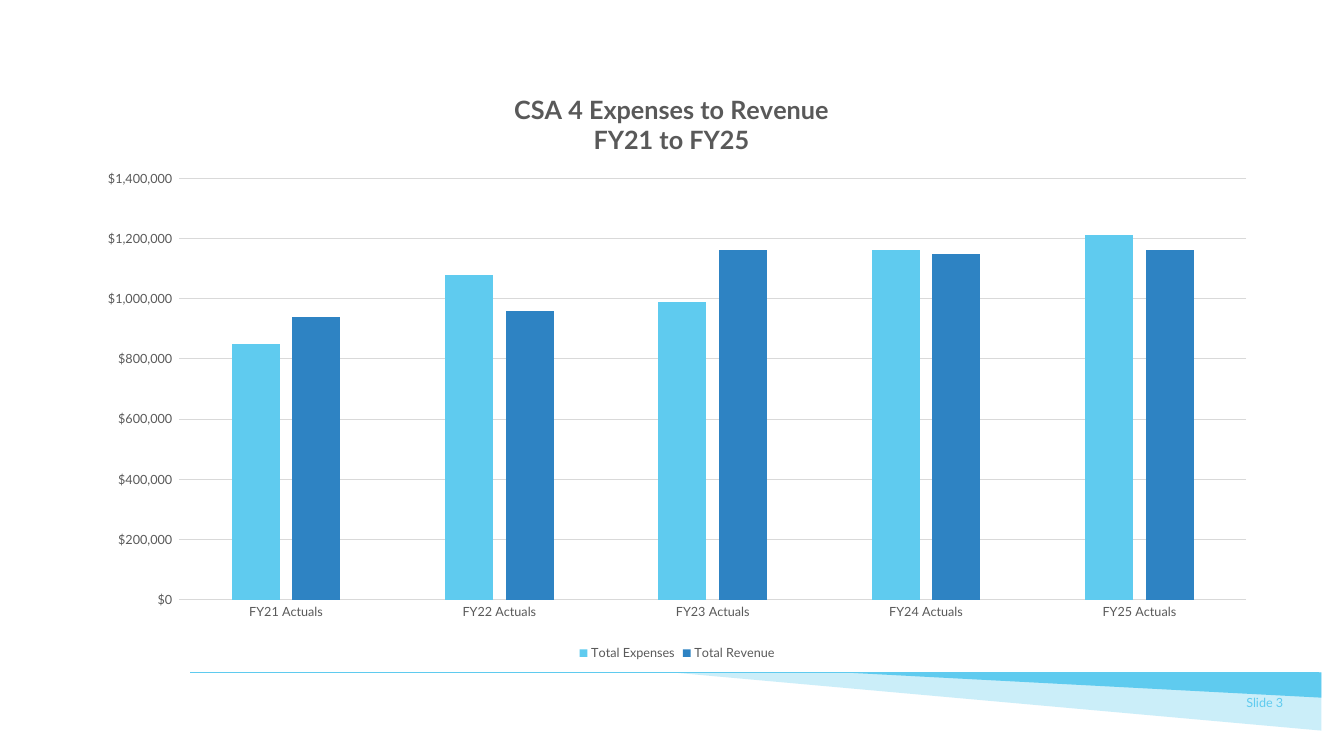
from dataclasses import dataclass

from lxml.etree import SubElement
from pptx import Presentation
from pptx.chart.data import CategoryChartData
from pptx.dml.color import RGBColor
from pptx.enum.chart import XL_CHART_TYPE, XL_LEGEND_POSITION, XL_TICK_MARK
from pptx.enum.shapes import MSO_CONNECTOR, MSO_SHAPE
from pptx.enum.text import MSO_ANCHOR, PP_ALIGN
from pptx.oxml import parse_xml
from pptx.oxml.ns import nsdecls, qn
from pptx.util import Cm, Pt

SKY = RGBColor(0x5F, 0xCB, 0xEF)
BLUE = RGBColor(0x2E, 0x83, 0xC3)
GRAY = RGBColor(0x59, 0x59, 0x59)
PALE = RGBColor(0xD9, 0xD9, 0xD9)
FACE = "Lato"
RIGHT = 33.3  # right edge of the footer band, in cm
TOP = 16.94  # top of the footer band, in cm


@dataclass
class Wedge:
    width: float
    height: float
    alpha: int = 100


@dataclass
class Bars:
    name: str
    color: RGBColor
    values: tuple[int, ...]


WEDGES = [Wedge(16.41, 1.47, 32), Wedge(12.14, 0.64)]
YEARS = [f"FY{year} Actuals" for year in range(21, 26)]
SERIES = [
    Bars("Total Expenses", SKY, (850000, 1080000, 990000, 1160000, 1210000)),
    Bars("Total Revenue", BLUE, (940000, 960000, 1160000, 1150000, 1160000)),
]


def style(font, size: float, color: RGBColor, bold: bool = False) -> None:
    font.name = FACE
    font.size = Pt(size)
    font.bold = bold
    font.color.rgb = color


def write(frame, text: str, *, size: float, color: RGBColor,
          bold: bool = False, align=PP_ALIGN.CENTER) -> None:
    frame.text = text
    for para in frame.paragraphs:
        para.alignment = align
        for run in para.runs:
            style(run.font, size, color, bold)


def draw_wedge(slide, wedge: Wedge) -> None:
    shape = slide.shapes.add_shape(
        MSO_SHAPE.RIGHT_TRIANGLE, Cm(RIGHT - wedge.width), Cm(TOP),
        Cm(wedge.width), Cm(wedge.height))
    shape.rotation = 180
    shape.shadow.inherit = False
    shape.line.fill.background()
    shape.fill.solid()
    shape.fill.fore_color.rgb = SKY
    if wedge.alpha < 100:
        tint = shape.fill._xPr.find(".//" + qn("a:srgbClr"))
        SubElement(tint, qn("a:alpha"), val=str(wedge.alpha * 1000))


def draw_band(slide) -> None:
    rule = slide.shapes.add_connector(
        MSO_CONNECTOR.STRAIGHT, Cm(4.8), Cm(TOP), Cm(33.25), Cm(TOP))
    rule.line.color.rgb = SKY
    rule.line.width = Pt(1)
    SubElement(rule._element.spPr, qn("a:effectLst"))
    for wedge in WEDGES:
        draw_wedge(slide, wedge)
    box = slide.shapes.add_textbox(Cm(29.92), Cm(17.2), Cm(2.67), Cm(1.02))
    box.text_frame.word_wrap = True
    box.text_frame.vertical_anchor = MSO_ANCHOR.MIDDLE
    write(box.text_frame, "Slide 3", size=9, color=SKY, align=PP_ALIGN.RIGHT)


def place(owner, before: str, **spots: float) -> None:
    """Fix a chart part at fractions of the chart, ahead of a given child."""
    for old in owner.findall(qn("c:layout")):
        owner.remove(old)
    inner = '<c:layoutTarget val="inner"/>' if "w" in spots else ""
    modes = "".join(f'<c:{key}Mode val="edge"/>' for key in ("x", "y"))
    sizes = "".join(f'<c:{key} val="{val}"/>' for key, val in spots.items())
    owner.find(qn(before)).addprevious(parse_xml(
        f'<c:layout {nsdecls("c")}><c:manualLayout>{inner}{modes}{sizes}'
        "</c:manualLayout></c:layout>"))


def style_axes(chart) -> None:
    for axis in (chart.category_axis, chart.value_axis):
        axis.major_tick_mark = axis.minor_tick_mark = XL_TICK_MARK.NONE
        style(axis.tick_labels.font, 9, GRAY)
    base = chart.category_axis.format.line
    grid = chart.value_axis.major_gridlines.format.line
    for line in (base, grid):
        line.color.rgb = PALE
        line.width = Pt(0.75)
    money = chart.value_axis
    money.format.line.fill.background()
    money.minimum_scale = 0
    money.maximum_scale = 1400000
    money.major_unit = 200000
    money.tick_labels.number_format = '"$"#,##0_);[Red]\\("$"#,##0\\)'
    money.tick_labels.number_format_is_linked = False


def draw_chart(slide) -> None:
    data = CategoryChartData()
    data.categories = YEARS
    for bars in SERIES:
        data.add_series(bars.name, bars.values)
    chart = slide.shapes.add_chart(
        XL_CHART_TYPE.COLUMN_CLUSTERED, Cm(2.13), Cm(1.8), Cm(29.87),
        Cm(14.96), data).chart
    style(chart.font, 10, GRAY)
    plot = chart.plots[0]
    plot.vary_by_categories = False
    plot.gap_width = 219
    plot.overlap = -27
    for series, bars in zip(plot.series, SERIES):
        series.format.fill.solid()
        series.format.fill.fore_color.rgb = bars.color
    style_axes(chart)
    chart.has_legend = True
    chart.legend.position = XL_LEGEND_POSITION.BOTTOM
    chart.legend.include_in_layout = False
    style(chart.legend.font, 9, GRAY)
    chart.has_title = True
    title = chart.chart_title
    write(title.text_frame, "CSA 4 Expenses to Revenue\nFY21 to FY25",
          size=18, color=GRAY, bold=True)
    title.include_in_layout = False
    place(title._element, "c:overlay", x=0.36, y=0.03)
    area = chart._chartSpace.find(".//" + qn("c:plotArea"))
    place(area, "c:barChart", x=0.08, y=0.18, w=0.9, h=0.71)


def main() -> None:
    deck = Presentation()
    deck.slide_width = Cm(33.87)
    deck.slide_height = Cm(19.05)
    slide = deck.slides.add_slide(deck.slide_layouts[6])
    draw_band(slide)
    draw_chart(slide)
    deck.save("out.pptx")


if __name__ == "__main__":
    main()
